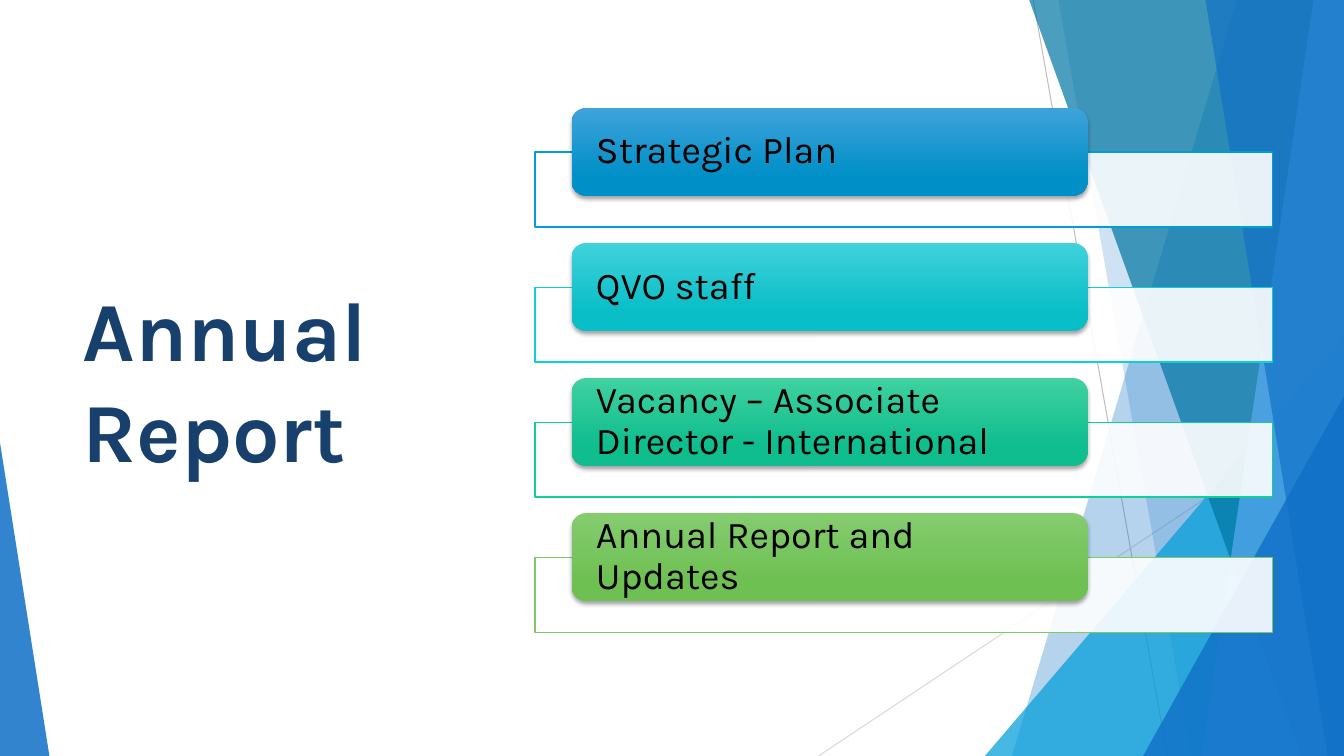
from lxml.etree import SubElement
from pptx import Presentation
from pptx.dml.color import RGBColor
from pptx.enum.shapes import MSO_CONNECTOR, MSO_SHAPE
from pptx.enum.text import MSO_ANCHOR, PP_ALIGN
from pptx.oxml.ns import qn
from pptx.util import Inches, Pt

WIDTH, HEIGHT = Inches(13.333), Inches(7.5)
FONT = "Karla"
COLORS = {
    "white": "FFFFFF", "black": "000000", "navy": "17406D",
    "blue": "0F6FC6", "sky": "009DD9", "teal": "0076A3", "light": "59AAF2",
    "gray": "BFBFBF", "pale_gray": "D9D9D9",
    "cyan": "0BD0D9", "mint": "10CF9B", "green": "7CCA62",
    "sky_top": "3FA2DB", "sky_base": "0090C7",
    "cyan_top": "3FD2DB", "cyan_base": "0ABEC7",
    "mint_top": "40D1A1", "mint_base": "0FBD8E",
    "green_top": "85CC6F", "green_base": "6EC053",
}
TOPICS = [
    ("Strategic Plan", "sky"),
    ("QVO staff", "cyan"),
    ("Vacancy – Associate Director - International", "mint"),
    ("Annual Report and Updates", "green"),
]
TOPIC_PITCH = 17.87


def color(name):
    """Return the named colour."""
    return RGBColor.from_string(COLORS[name])


def across(percent):
    """Turn a percentage of the slide width into a length."""
    return int(WIDTH * percent / 100)


def down(percent):
    """Turn a percentage of the slide height into a length."""
    return int(HEIGHT * percent / 100)


def frame(left, top, width, height):
    """Turn four percentages of the slide into a position and size."""
    return across(left), down(top), across(width), down(height)


def paint(shape, name, opacity):
    """Give a shape a translucent fill, no outline and no shadow."""
    shape.shadow.inherit = False
    shape.fill.solid()
    shape.fill.fore_color.rgb = color(name)
    shape.line.fill.background()
    tint = shape.element.spPr.xpath("./a:solidFill/a:srgbClr")[0]
    SubElement(tint, qn("a:alpha")).set("val", str(opacity * 1000))


def add_hairline(page, start, end, name):
    """Draw a thin background line between two points."""
    line = page.shapes.add_connector(
        MSO_CONNECTOR.STRAIGHT, across(start[0]), down(start[1]),
        across(end[0]), down(end[1]))
    line.line.color.rgb = color(name)
    line.line.width = Pt(0.75)
    SubElement(line.element.spPr, qn("a:effectLst"))


def add_facet(page, top_x, bottom_x, name, opacity):
    """Draw a slanted panel that reaches the right edge of the slide."""
    builder = page.shapes.build_freeform(across(top_x), 0)
    builder.add_line_segments(
        [(WIDTH, 0), (WIDTH, HEIGHT), (across(bottom_x), HEIGHT)], close=True)
    paint(builder.convert_to_shape(), name, opacity)


def add_wedge(page, left, top, width, apex, name, opacity):
    """Draw a right triangle standing on the bottom edge of the slide."""
    wedge = page.shapes.add_shape(
        MSO_SHAPE.ISOSCELES_TRIANGLE, *frame(left, top, width, 100 - top))
    wedge.adjustments[0] = apex
    paint(wedge, name, opacity)


def write(box, text, size, name, bold=False, spacing=1.0):
    """Put left-aligned, vertically centred text in a box."""
    box.text_frame.word_wrap = True
    box.text_frame.vertical_anchor = MSO_ANCHOR.MIDDLE
    para = box.text_frame.paragraphs[0]
    para.alignment = PP_ALIGN.LEFT
    para.line_spacing = spacing
    span = para.add_run()
    span.text = text
    span.font.name = FONT
    span.font.size = Pt(size)
    span.font.bold = bold
    span.font.color.rgb = color(name)


def add_drop_shadow(shape):
    """Cast a soft shadow straight below a shape."""
    shape.shadow.inherit = False
    effects = shape.element.spPr.find(qn("a:effectLst"))
    shadow = SubElement(effects, qn("a:outerShdw"), blurRad=str(Pt(3)),
                        dist=str(Pt(2)), dir="5400000", rotWithShape="0")
    tint = SubElement(shadow, qn("a:srgbClr"), val=COLORS["black"])
    SubElement(tint, qn("a:alpha"), val="35000")


def add_topic(page, row, text, name):
    """Draw one topic: an outlined panel with a rounded heading over it."""
    offset = row * TOPIC_PITCH
    panel = page.shapes.add_shape(
        MSO_SHAPE.RECTANGLE, *frame(39.8, 20.13 + offset, 54.9, 9.9))
    paint(panel, "white", 90)
    panel.line.color.rgb = color(name)
    panel.line.width = Pt(1)

    heading = page.shapes.add_shape(
        MSO_SHAPE.ROUNDED_RECTANGLE, *frame(42.53, 14.27 + offset, 38.4, 11.6))
    heading.fill.gradient()
    heading.fill.gradient_angle = 270
    stops = zip(heading.fill.gradient_stops, ("top", "base"), (0, 0.78))
    for stop, shade, position in stops:
        stop.color.rgb = color(f"{name}_{shade}")
        stop.position = position
    heading.line.fill.background()
    add_drop_shadow(heading)
    inner = heading.text_frame
    inner.margin_left = inner.margin_right = Inches(0.2)
    inner.margin_top = inner.margin_bottom = 0
    write(heading, text, 27, "black", spacing=0.9)


def add_backdrop(page):
    """Draw the lines, facets and wedges behind the content."""
    add_hairline(page, (76.88, 0), (86.85, 100), "gray")
    add_hairline(page, (100, 53.73), (60.9, 100), "pale_gray")
    add_facet(page, 92.03, 75.3, "blue", 30)
    add_facet(page, 78.75, 88.65, "blue", 20)
    add_wedge(page, 73.28, 44.4, 26.72, 1, "sky", 72)
    add_facet(page, 76.58, 96.83, "teal", 70)
    add_facet(page, 97.73, 89.4, "light", 70)
    add_facet(page, 89.7, 98.78, "blue", 65)
    add_wedge(page, 85.05, 52.4, 14.95, 1, "blue", 80)
    add_wedge(page, 0, 58.53, 3.68, 0, "blue", 85)


def main():
    """Build the slide and save the deck."""
    deck = Presentation()
    deck.slide_width, deck.slide_height = WIDTH, HEIGHT
    page = deck.slides.add_slide(deck.slide_layouts[6])
    add_backdrop(page)
    title = page.shapes.add_textbox(*frame(5.4, 20.13, 29.1, 59.73))
    write(title, "Annual Report", 60, "navy", bold=True)
    for row, (text, name) in enumerate(TOPICS):
        add_topic(page, row, text, name)
    deck.save("out.pptx")


if __name__ == "__main__":
    main()
